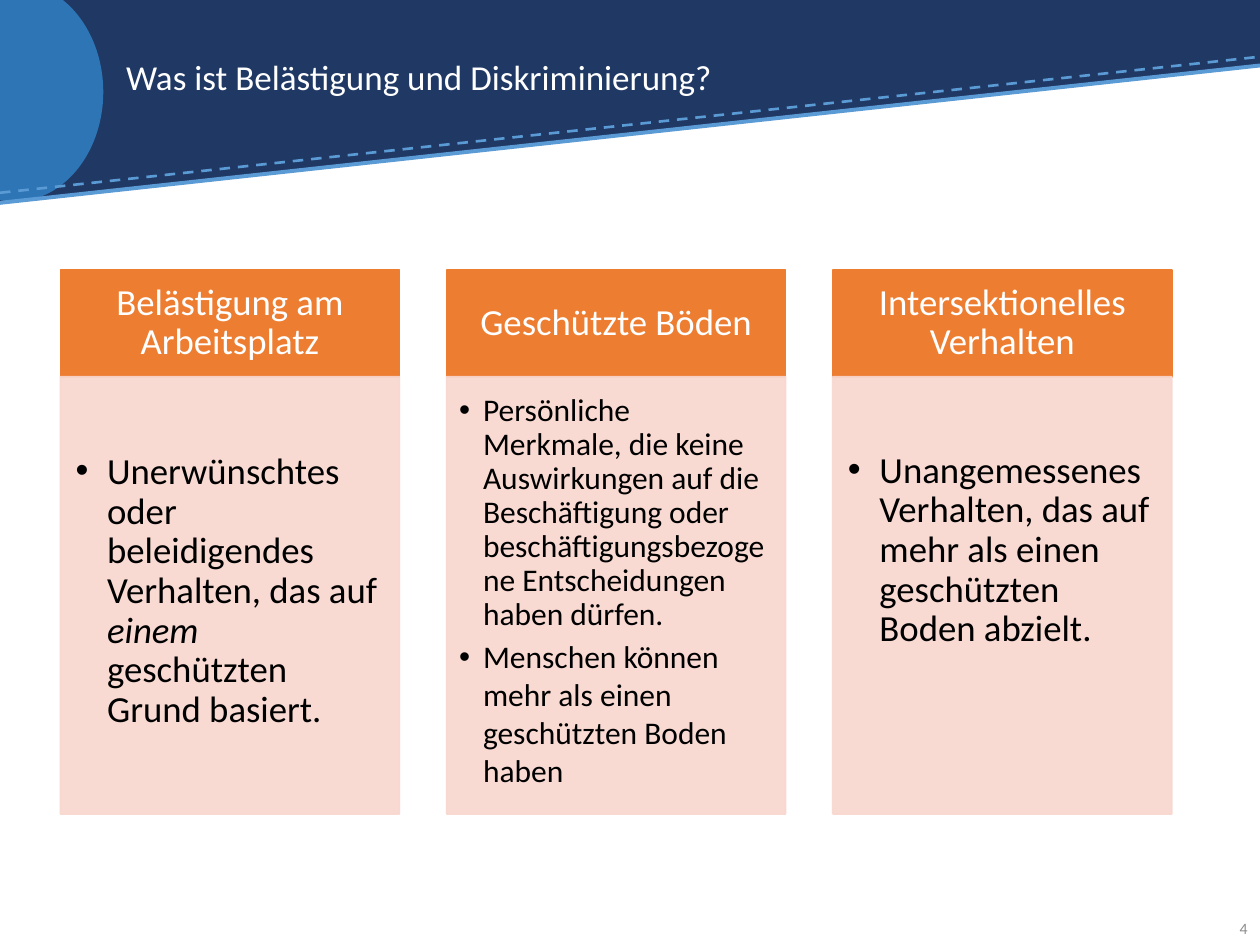
import pptx
import pptx.util
import pptx.dml.color
import pptx.enum.dml
import pptx.enum.shapes
import pptx.enum.text
import pptx.oxml.ns
from lxml import etree
from dataclasses import dataclass

Inches = pptx.util.Inches
Pt = pptx.util.Pt
SHAPE = pptx.enum.shapes.MSO_SHAPE
ALIGN = pptx.enum.text.PP_ALIGN
MIDDLE = pptx.enum.text.MSO_ANCHOR.MIDDLE
DASH = pptx.enum.dml.MSO_LINE.DASH
qn = pptx.oxml.ns.qn


@dataclass(frozen=True)
class Theme:
    font: str = "Calibri"
    navy: str = "203864"
    blue: str = "2E75B6"
    sky: str = "5B9BD5"
    orange: str = "ED7D31"
    peach: str = "F8D7CE"
    white: str = "FFFFFF"
    black: str = "000000"
    grey: str = "8C8C8C"
    title_size: int = 20
    head_size: int = 21
    body_size: int = 21
    small_body_size: int = 18
    number_size: int = 9


THEME = Theme()
FIRST_LEFT, LAST_LEFT = 0.48, 6.61
CARD_WIDTH, HEAD_TOP, HEAD_HEIGHT, BODY_HEIGHT = 2.69, 2.14, 0.85, 3.47
BODY_TOP = HEAD_TOP + HEAD_HEIGHT
HEAD_INSETS = (0.16, 0.09, 0.16, 0.09)

CARDS = [
    {
        "head": "Belästigung am Arbeitsplatz",
        "body": [([("Unerwünschtes oder beleidigendes Verhalten, das auf ", False),
                   ("einem ", True),
                   ("geschützten Grund basiert.", False)], 0.9)],
        "size": THEME.body_size,
        "indent": 0.25,
        "insets": (0.12, 0.12, 0.16, 0.18),
    },
    {
        "head": "Geschützte Böden",
        "body": [([("Persönliche Merkmale, die keine Auswirkungen auf die Beschäftigung oder "
                    "beschäftigungsbezogene Entscheidungen haben dürfen.", False)], 0.9),
                 ([("Menschen können mehr als einen geschützten Boden haben", False)], 1.0)],
        "size": THEME.small_body_size,
        "indent": 0.19,
        "insets": (0.1, 0.1, 0.14, 0.16),
    },
    {
        "head": "Intersektionelles Verhalten",
        "body": [([("Unangemessenes Verhalten, das auf mehr als einen geschützten Boden "
                    "abzielt.", False)], 0.9)],
        "size": THEME.body_size,
        "indent": 0.25,
        "insets": (0.12, 0.12, 0.16, 0.83),
    },
]


def rgb(color):
    return pptx.dml.color.RGBColor.from_string(color)


def set_attrs(obj, values):
    for name, value in values.items():
        setattr(obj, name, value)


def add_block(s, kind, box, color, outline=False):
    sp = s.shapes.add_shape(kind, *map(Inches, box))
    sp.shadow.inherit = False
    sp.fill.solid()
    sp.fill.fore_color.rgb = rgb(color)
    if outline:
        sp.line.color.rgb = rgb(color)
        sp.line.width = Pt(1)
    else:
        sp.line.fill.background()
    return sp


def set_alpha(sp, percent):
    for clr in sp.element.spPr.iter(qn("a:srgbClr")):
        etree.SubElement(clr, qn("a:alpha")).set("val", str(percent * 1000))


def add_slope(s, left_y, right_y, width, dash=None):
    line = s.shapes.add_connector(pptx.enum.shapes.MSO_CONNECTOR.STRAIGHT,
                                  Inches(0), Inches(left_y), Inches(10), Inches(right_y))
    set_attrs(line.line, {"width": Pt(width), "dash_style": dash})
    line.line.color.rgb = rgb(THEME.sky)
    etree.SubElement(line.element.spPr, qn("a:effectLst"))


def set_frame(tf, insets=(0.1, 0.05, 0.1, 0.05)):
    sides = ("margin_left", "margin_top", "margin_right", "margin_bottom")
    set_attrs(tf, {"word_wrap": True, "vertical_anchor": MIDDLE,
                   "auto_size": pptx.enum.text.MSO_AUTO_SIZE.NONE,
                   **dict(zip(sides, map(Inches, insets)))})


def write(p, runs, size, color, **layout):
    set_attrs(p, layout)
    for text, italic in runs:
        r = p.add_run()
        r.text = text
        set_attrs(r.font, {"name": THEME.font, "size": Pt(size),
                           "italic": italic, "bold": False})
        r.font.color.rgb = rgb(color)


def add_bullet(p, indent):
    pPr = p._p.get_or_add_pPr()
    pPr.set("marL", str(Inches(indent)))
    pPr.set("indent", str(-Inches(indent)))
    etree.SubElement(pPr, qn("a:buFont")).set("typeface", "Arial")
    etree.SubElement(pPr, qn("a:buChar")).set("char", "•")


def add_banner(s):
    add_block(s, SHAPE.RECTANGLE, (0, 0, 10, 0.52), THEME.navy)
    wedge = add_block(s, SHAPE.RIGHT_TRIANGLE, (0, 0.51, 10, 1.09), THEME.navy)
    wedge.element.spPr.xfrm.set("flipV", "1")
    add_block(s, SHAPE.OVAL, (-0.59, -0.14, 1.41, 1.74), THEME.blue)
    add_slope(s, 1.53, 0.45, 1.5, DASH)
    add_slope(s, 1.61, 0.52, 2.25)


def add_title(s, text):
    title = s.shapes.title
    box = map(Inches, (0.9, 0.2, 8.05, 0.86))
    set_attrs(title, dict(zip(("left", "top", "width", "height"), box)))
    set_frame(title.text_frame)
    write(title.text_frame.paragraphs[0], [(text, False)], THEME.title_size, THEME.white,
          alignment=ALIGN.LEFT, line_spacing=0.9)
    title.element.getparent().append(title.element)


def add_number(s, text):
    tf = s.shapes.add_textbox(*map(Inches, (9.47, 7.17, 0.53, 0.4))).text_frame
    set_frame(tf)
    write(tf.paragraphs[0], [(text, False)], THEME.number_size, THEME.grey,
          alignment=ALIGN.RIGHT, space_after=Pt(6))


def add_card(s, left, card):
    head = add_block(s, SHAPE.RECTANGLE, (left, HEAD_TOP, CARD_WIDTH, HEAD_HEIGHT),
                     THEME.orange, outline=True)
    set_frame(head.text_frame, HEAD_INSETS)
    write(head.text_frame.paragraphs[0], [(card["head"], False)], THEME.head_size,
          THEME.white, alignment=ALIGN.CENTER, line_spacing=0.9)

    body = add_block(s, SHAPE.RECTANGLE, (left, BODY_TOP, CARD_WIDTH, BODY_HEIGHT),
                     THEME.peach, outline=True)
    set_alpha(body, 90)
    tf = body.text_frame
    set_frame(tf, card["insets"])
    for i, (runs, spacing) in enumerate(card["body"]):
        p = tf.add_paragraph() if i else tf.paragraphs[0]
        write(p, runs, card["size"], THEME.black, alignment=ALIGN.LEFT,
              line_spacing=spacing, space_after=Pt(card["size"] * 0.15))
        add_bullet(p, card["indent"])


def main():
    prs = pptx.Presentation()
    set_attrs(prs, {"slide_width": Inches(10), "slide_height": Inches(7.5)})
    s = prs.slides.add_slide(prs.slide_layouts[5])
    add_banner(s)
    add_title(s, "Was ist Belästigung und Diskriminierung?")
    add_number(s, "4")
    step = (LAST_LEFT - FIRST_LEFT) / (len(CARDS) - 1)
    for i, card in enumerate(CARDS):
        add_card(s, FIRST_LEFT + i * step, card)
    prs.save("out.pptx")


if __name__ == "__main__":
    main()
